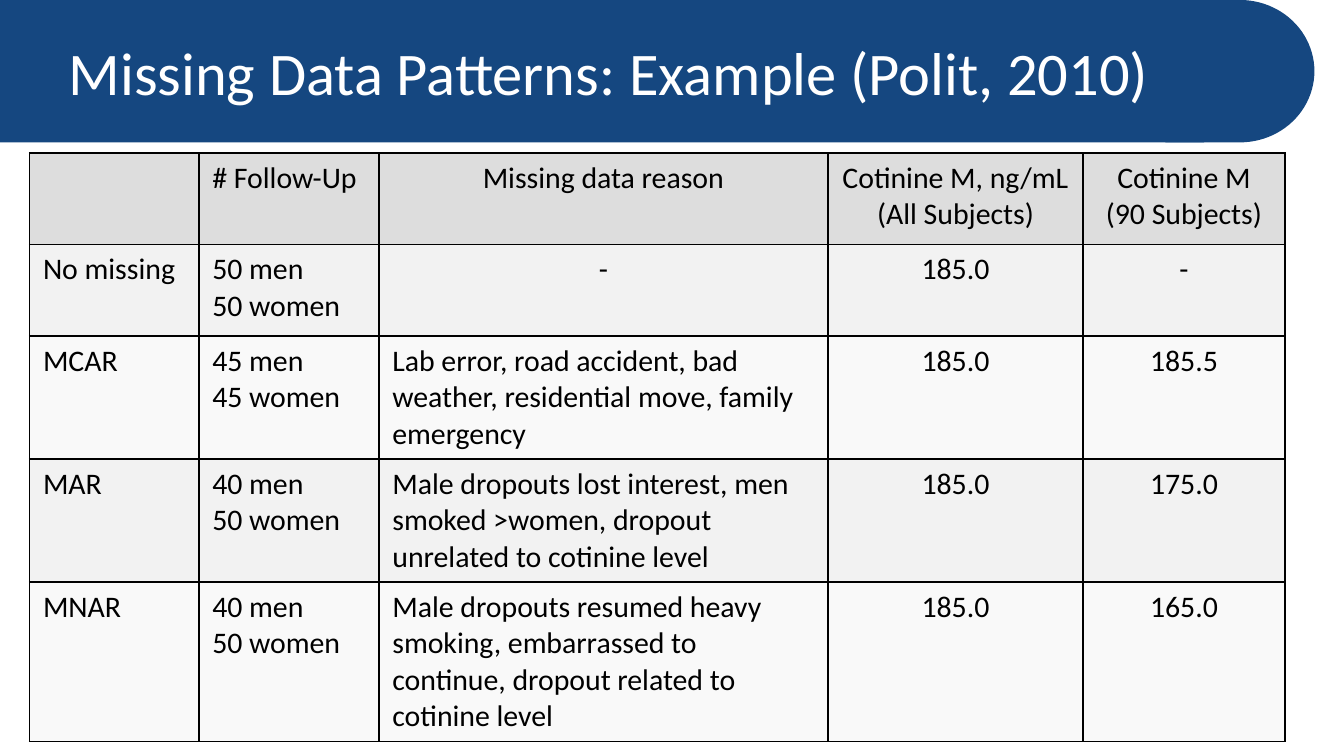
from dataclasses import dataclass

import lxml.etree
import pptx
import pptx.dml.color
import pptx.enum.shapes
import pptx.enum.text
import pptx.oxml.ns
import pptx.util

Inches = pptx.util.Inches
Align = pptx.enum.text.PP_ALIGN
Preset = pptx.enum.shapes.MSO_SHAPE
SLIDE_WIDTH = 10
SLIDE_HEIGHT = SLIDE_WIDTH * 9 / 16


@dataclass(frozen=True)
class Theme:
    font: str = "Calibri"
    title_size: float = 32.4
    table_size: float = 16
    border_width: float = 1
    band: str = "154780"
    title: str = "FFFFFF"
    text: str = "000000"
    header: str = "DDDDDD"
    stripes: tuple[str, str] = ("F2F2F2", "F9F9F9")


@dataclass(frozen=True)
class Box:
    left: float
    top: float
    width: float
    height: float

    def lengths(self) -> tuple:
        return tuple(Inches(value) for value in (self.left, self.top, self.width, self.height))


@dataclass(frozen=True)
class BandPart:
    preset: Preset
    box: Box


@dataclass(frozen=True)
class Column:
    width: float
    header: str
    header_alignment: Align
    body_alignment: Align


THEME = Theme()
BAND_HEIGHT = 1.06
BAND_PARTS = (
    BandPart(Preset.FLOWCHART_DELAY, Box(8.67, 0, 1.11, BAND_HEIGHT)),
    BandPart(Preset.RECTANGLE, Box(0, 0, 8.96, BAND_HEIGHT)),
)
TITLE_BOX = Box(0.41, 0.06, 8.75, 0.94)
TABLE_LEFT, TABLE_TOP, ROW_HEIGHT = 0.22, 1.14, 0.68
COLUMNS = (
    Column(1.26, "", Align.LEFT, Align.LEFT),
    Column(1.34, "# Follow-Up", Align.LEFT, Align.LEFT),
    Column(3.34, "Missing data reason", Align.CENTER, Align.LEFT),
    Column(1.9, "Cotinine M, ng/mL\n(All Subjects)", Align.CENTER, Align.CENTER),
    Column(1.5, "Cotinine M\n(90 Subjects)", Align.CENTER, Align.CENTER),
)
PATTERNS = (
    ("No missing", "50 men\n50 women", "-", "185.0", "-"),
    ("MCAR", "45 men\n45 women",
     "Lab error, road accident, bad weather, residential move, family emergency",
     "185.0", "185.5"),
    ("MAR", "40 men\n50 women",
     "Male dropouts lost interest, men smoked >women, dropout unrelated to cotinine level",
     "185.0", "175.0"),
    ("MNAR", "40 men\n50 women",
     "Male dropouts resumed heavy smoking, embarrassed to continue, "
     "dropout related to cotinine level",
     "185.0", "165.0"),
)


def rgb(color: str) -> pptx.dml.color.RGBColor:
    return pptx.dml.color.RGBColor.from_string(color)


def paint(fill, color: str) -> None:
    fill.solid()
    fill.fore_color.rgb = rgb(color)


def write(text_frame, text: str, size: float, color: str, alignment: Align) -> None:
    """Fill the frame, one paragraph for each line of text."""
    text_frame.text = text
    font_format = {"name": THEME.font, "size": pptx.util.Pt(size), "bold": False}
    for paragraph in text_frame.paragraphs:
        paragraph.alignment = alignment
        for run in paragraph.runs:
            for name, value in font_format.items():
                setattr(run.font, name, value)
            run.font.color.rgb = rgb(color)


def draw_band(slide) -> None:
    for part in BAND_PARTS:
        shape = slide.shapes.add_shape(part.preset, *part.box.lengths())
        shape.shadow.inherit = False
        shape.line.fill.background()
        paint(shape.fill, THEME.band)


def draw_title(slide, text: str) -> None:
    title = slide.shapes.title
    for name, value in zip(("left", "top", "width", "height"), TITLE_BOX.lengths()):
        setattr(title, name, value)
    frame_format = {
        "word_wrap": True,
        "auto_size": pptx.enum.text.MSO_AUTO_SIZE.NONE,
        "vertical_anchor": pptx.enum.text.MSO_ANCHOR.MIDDLE,
    }
    for name, value in frame_format.items():
        setattr(title.text_frame, name, value)
    write(title.text_frame, text, THEME.title_size, THEME.title, Align.LEFT)
    # The title has to lie in front of the band.
    title.element.getparent().append(title.element)


def add_borders(cell) -> None:
    qualified = pptx.oxml.ns.qn
    properties = cell._tc.get_or_add_tcPr()
    width = str(pptx.util.Pt(THEME.border_width))
    for side in ("a:lnL", "a:lnR", "a:lnT", "a:lnB"):
        line = lxml.etree.SubElement(properties, qualified(side), w=width)
        fill = lxml.etree.SubElement(line, qualified("a:solidFill"))
        lxml.etree.SubElement(fill, qualified("a:srgbClr"), val=THEME.text)


def draw_table(slide) -> None:
    rows = (tuple(column.header for column in COLUMNS), *PATTERNS)
    box = Box(TABLE_LEFT, TABLE_TOP, sum(column.width for column in COLUMNS),
              ROW_HEIGHT * len(rows))
    table = slide.shapes.add_table(len(rows), len(COLUMNS), *box.lengths()).table
    for index, column in enumerate(COLUMNS):
        table.columns[index].width = Inches(column.width)
    for row_index, row in enumerate(rows):
        is_header = row_index == 0
        fill = THEME.header if is_header else THEME.stripes[(row_index - 1) % 2]
        for column_index, (column, text) in enumerate(zip(COLUMNS, row)):
            cell = table.cell(row_index, column_index)
            alignment = column.header_alignment if is_header else column.body_alignment
            if text == "-":
                alignment = Align.CENTER
            add_borders(cell)
            paint(cell.fill, fill)
            write(cell.text_frame, text, THEME.table_size, THEME.text, alignment)


def main() -> None:
    presentation = pptx.Presentation()
    presentation.slide_width = Inches(SLIDE_WIDTH)
    presentation.slide_height = Inches(SLIDE_HEIGHT)
    title_only = presentation.slide_layouts.get_by_name("Title Only")
    slide = presentation.slides.add_slide(title_only)
    draw_band(slide)
    draw_title(slide, "Missing Data Patterns: Example (Polit, 2010)")
    draw_table(slide)
    presentation.save("out.pptx")


if __name__ == "__main__":
    main()
